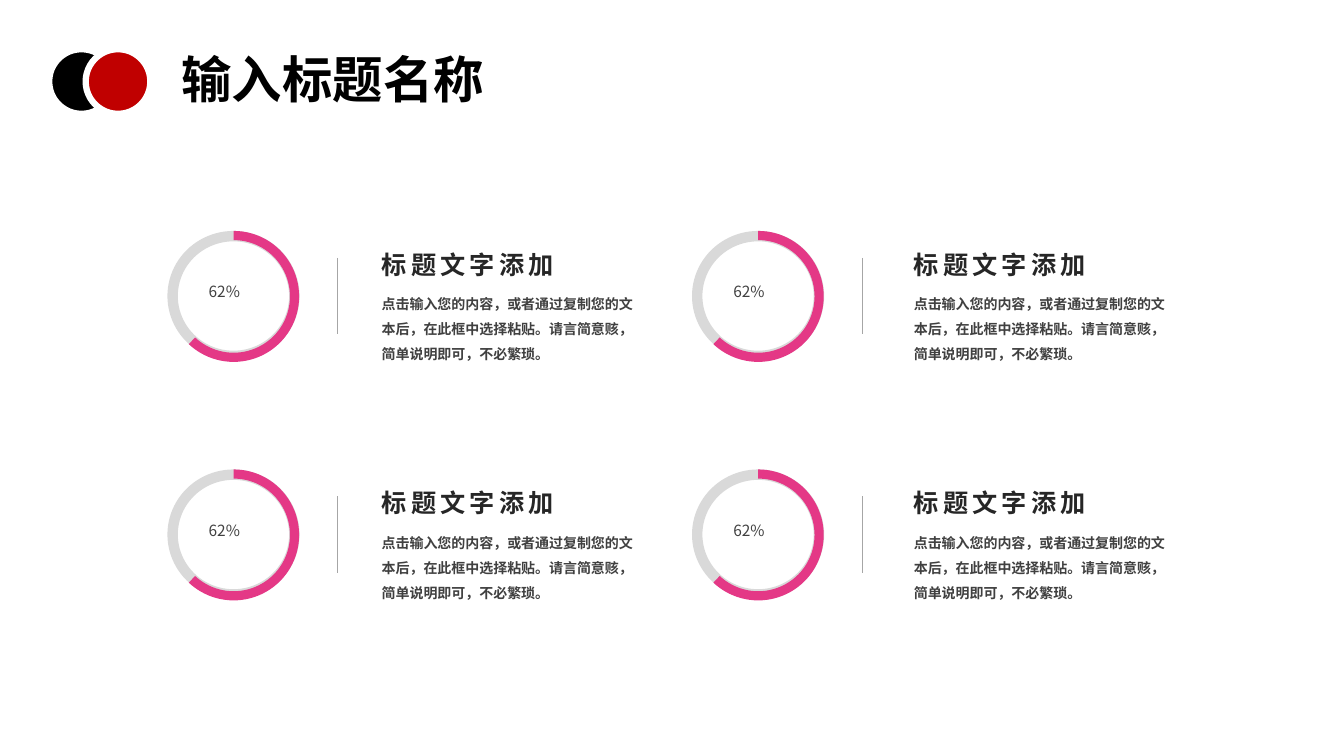
from dataclasses import dataclass
from itertools import product

from lxml import etree
from pptx import Presentation
from pptx.dml.color import RGBColor
from pptx.enum.shapes import MSO_CONNECTOR, MSO_SHAPE
from pptx.enum.text import MSO_ANCHOR, MSO_AUTO_SIZE, PP_ALIGN
from pptx.oxml.ns import qn
from pptx.util import Cm, Pt

DONUT = MSO_SHAPE.DONUT
BLOCK_ARC = MSO_SHAPE.BLOCK_ARC
OVAL = MSO_SHAPE.OVAL
STRAIGHT = MSO_CONNECTOR.STRAIGHT
TOP = MSO_ANCHOR.TOP
LEFT = PP_ALIGN.LEFT
FIT_SHAPE = MSO_AUTO_SIZE.SHAPE_TO_FIT_TEXT
NO_FIT = MSO_AUTO_SIZE.NONE

FONT = "Noto Sans CJK JP"
TITLE = "输入标题名称"
HEADING = "标题文字添加"
BODY = "点击输入您的内容，或者通过复制您的文本后，在此框中选择粘贴。请言简意赅，简单说明即可，不必繁琐。"
PERCENT = "62%"

RING_PITCH = 13.22
TEXT_PITCH = 13.41
ROW_PITCH = 6.01


@dataclass(frozen=True)
class Box:
    left: float
    top: float
    width: float
    height: float

    def shifted(self, right: float, down: float) -> "Box":
        return Box(self.left + right, self.top + down, self.width, self.height)

    def lengths(self) -> list:
        return [Cm(value) for value in (self.left, self.top, self.width, self.height)]


@dataclass(frozen=True)
class TextStyle:
    size: float
    color: str
    bold: bool = False
    tracking: int = 0
    line_spacing: float = 1.0
    inset: bool = True
    wrap: bool = True


@dataclass(frozen=True)
class Ring:
    preset: int
    box: Box
    color: str
    adjustments: tuple


@dataclass(frozen=True)
class Label:
    text: str
    box: Box
    style: TextStyle
    pitch: float


TITLE_STYLE = TextStyle(36, "000000", bold=True)
RINGS = (
    Ring(DONUT, Box(4.22, 5.82, 3.33, 3.28), "D9D9D9", (0.08,)),
    Ring(BLOCK_ARC, Box(4.24, 5.82, 3.3, 3.3), "E43886", (162, 79.92, 0.07)),
)
LABELS = (
    Label(PERCENT, Box(5.26, 7.11, 1.37, 0.74),
          TextStyle(11, "404040", inset=False, wrap=False), RING_PITCH),
    Label(BODY, Box(9.37, 7.11, 6.83, 2.18),
          TextStyle(10, "404040", bold=True, line_spacing=1.5), TEXT_PITCH),
    Label(HEADING, Box(9.37, 6.15, 5.13, 1.02),
          TextStyle(18, "262626", bold=True, tracking=300), TEXT_PITCH),
)
DIVIDER = Box(8.51, 6.5, 0, 1.92)
EMBLEM = Box(1.24, 1.24, 1.63, 1.63)


def rgb(value: str) -> RGBColor:
    return RGBColor.from_string(value)


def apply(target, values: dict) -> None:
    for name, value in values.items():
        setattr(target, name, value)


def write_text(shape, text: str, style: TextStyle) -> None:
    frame = shape.text_frame
    frame.text = text
    apply(frame, {
        "word_wrap": style.wrap,
        "vertical_anchor": TOP,
        "auto_size": FIT_SHAPE if style.inset else NO_FIT,
    })
    if not style.inset:
        apply(frame, dict.fromkeys(
            ("margin_left", "margin_top", "margin_right", "margin_bottom"), 0))
    paragraph = frame.paragraphs[0]
    apply(paragraph, {"alignment": LEFT, "line_spacing": style.line_spacing})
    font = paragraph.runs[0].font
    apply(font, {"name": FONT, "size": Pt(style.size), "bold": style.bold})
    font.color.rgb = rgb(style.color)
    properties = paragraph.runs[0]._r.get_or_add_rPr()
    etree.SubElement(properties, qn("a:ea"), typeface=FONT)
    if style.tracking:
        properties.set("spc", str(style.tracking))


def add_filled(slide, preset: int, box: Box, color: str):
    shape = slide.shapes.add_shape(preset, *box.lengths())
    shape.shadow.inherit = False
    shape.fill.solid()
    shape.fill.fore_color.rgb = rgb(color)
    shape.line.fill.background()
    return shape


def add_ring(slide, ring: Ring, right: float, down: float) -> None:
    shape = add_filled(slide, ring.preset, ring.box.shifted(right, down), ring.color)
    for index, value in enumerate(ring.adjustments):
        shape.adjustments[index] = value


def add_divider(slide, box: Box) -> None:
    left, top, width, height = box.lengths()
    connector = slide.shapes.add_connector(STRAIGHT, left, top, left + width, top + height)
    connector.line.color.rgb = rgb("A6A6A6")
    connector.line.width = Pt(0.5)
    etree.SubElement(connector._element.spPr, qn("a:effectLst"))


def add_item(slide, column: int, row: int) -> None:
    down = row * ROW_PITCH
    for ring in RINGS:
        add_ring(slide, ring, column * RING_PITCH, down)
    add_divider(slide, DIVIDER.shifted(column * RING_PITCH, down))
    for label in LABELS:
        box = label.box.shifted(column * label.pitch, down)
        write_text(slide.shapes.add_textbox(*box.lengths()), label.text, label.style)


def add_header(slide) -> None:
    for right, color in ((0, "000000"), (0.92, "C00000")):
        circle = add_filled(slide, OVAL, EMBLEM.shifted(right, 0), color)
        circle.line.color.rgb = rgb("FFFFFF")
        circle.line.width = Pt(4.5)
    title = slide.shapes.title
    left, top, width, height = Box(4.32, 1.09, 8.99, 1.8).lengths()
    apply(title, {"left": left, "top": top, "width": width, "height": height})
    write_text(title, TITLE, TITLE_STYLE)


def main() -> None:
    presentation = Presentation()
    presentation.slide_width = Cm(33.87)
    presentation.slide_height = Cm(19.05)
    slide = presentation.slides.add_slide(presentation.slide_layouts[5])
    add_header(slide)
    for column, row in product(range(2), repeat=2):
        add_item(slide, column, row)
    presentation.save("out.pptx")


if __name__ == "__main__":
    main()
